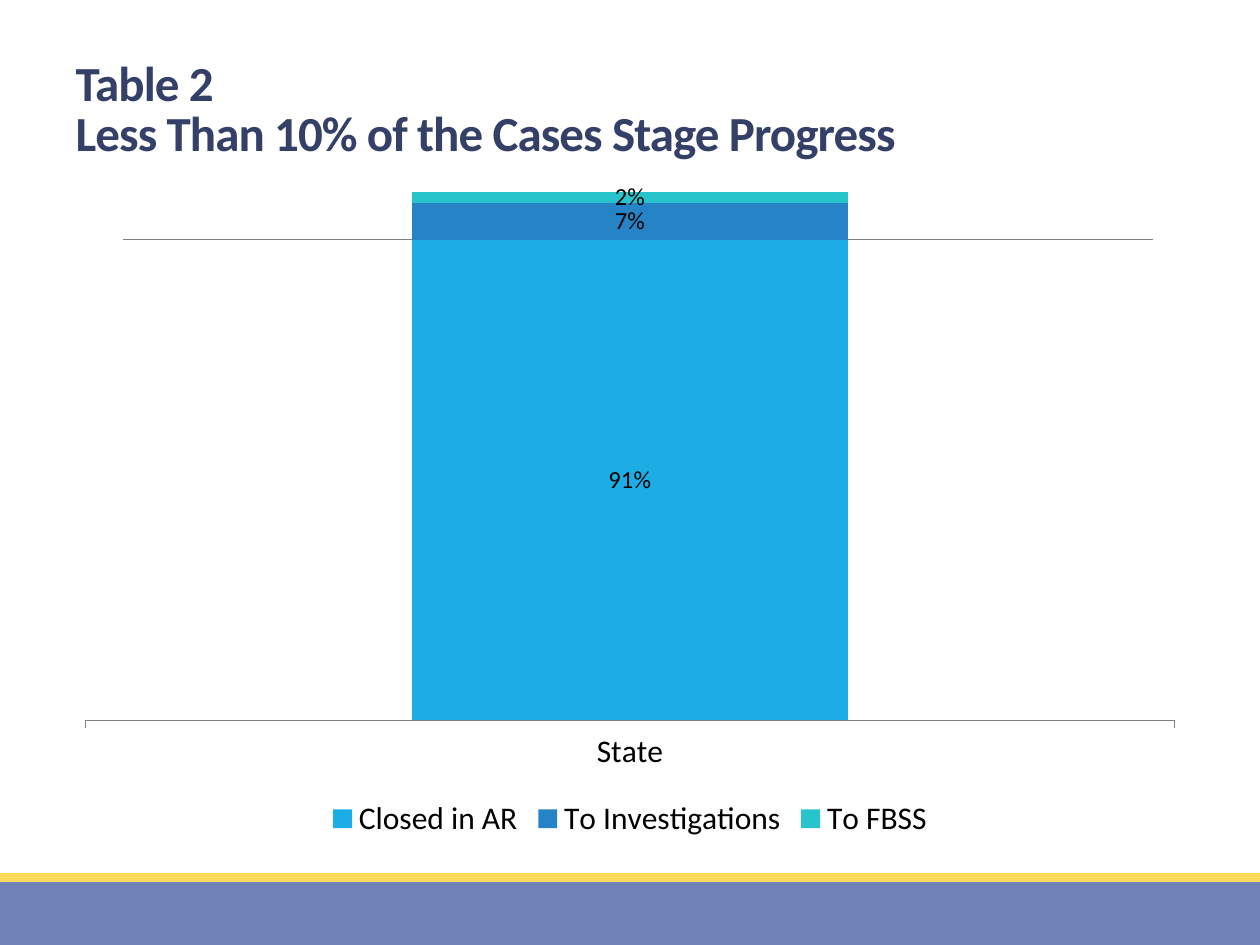
from dataclasses import dataclass

from lxml.etree import SubElement
from pptx import Presentation
from pptx.chart.data import CategoryChartData
from pptx.dml.color import RGBColor
from pptx.enum.chart import XL_CHART_TYPE as ChartType
from pptx.enum.chart import XL_LABEL_POSITION as LabelPos
from pptx.enum.chart import XL_LEGEND_POSITION as LegendPos
from pptx.enum.chart import XL_TICK_LABEL_POSITION as TickLabelPos
from pptx.enum.chart import XL_TICK_MARK as TickMark
from pptx.enum.shapes import MSO_CONNECTOR as Connector
from pptx.enum.shapes import MSO_SHAPE as Shape
from pptx.enum.text import MSO_ANCHOR as Anchor
from pptx.enum.text import MSO_AUTO_SIZE as AutoSize
from pptx.enum.text import PP_ALIGN as Align
from pptx.oxml.ns import qn
from pptx.util import Inches, Pt

FONT = "Calibri"
COLORS = {
    "title": "344068",
    "band": "7182B8",
    "stripe": "FFD85D",
    "rule": "808080",
    "text": "000000",
    "closed": "1CADE4",
    "investigations": "2683C6",
    "fbss": "28C4CC",
}


@dataclass
class Band:
    top: float
    height: float
    color: str


@dataclass
class Stage:
    name: str
    share: float
    color: str


BANDS = [Band(7, 0.5, "band"), Band(6.93, 0.07, "stripe")]
STAGES = [
    Stage("Closed in AR", 0.91, "closed"),
    Stage("To Investigations", 0.07, "investigations"),
    Stage("To FBSS", 0.02, "fbss"),
]


def rgb(name: str) -> RGBColor:
    """Return the named palette colour."""
    return RGBColor.from_string(COLORS[name])


def set_font(font, size: float, color: str = "text", bold: bool = False) -> None:
    """Apply the slide's typeface with a size, colour and weight."""
    font.name, font.size, font.bold = FONT, Pt(size), bold
    font.color.rgb = rgb(color)


def write_text(tf, text: str, *, size: float, color: str, bold: bool = False,
               line_spacing: float = 1.0, tracking: float = 0) -> None:
    """Write lines of one paragraph into a text frame and format them."""
    p = tf.paragraphs[0]
    p.alignment, p.line_spacing = Align.LEFT, line_spacing
    for i, line in enumerate(text.split("\n")):
        if i:
            p.add_line_break()
        r = p.add_run()
        r.text = line
        set_font(r.font, size, color, bold)
        r.font._element.set("spc", str(int(tracking * 100)))


def add_band(s, band: Band) -> None:
    """Draw a full-width band at the foot of the slide."""
    sp = s.shapes.add_shape(Shape.RECTANGLE, 0, Inches(band.top), Inches(10), Inches(band.height))
    sp.shadow.inherit = False
    sp.fill.solid()
    sp.fill.fore_color.rgb = rgb(band.color)
    sp.line.fill.background()


def add_rule(s) -> None:
    """Draw the thin horizontal rule behind the chart."""
    y = Inches(1.9)
    rule = s.shapes.add_connector(Connector.STRAIGHT, Inches(0.98), y, Inches(9.15), y)
    rule.line.color.rgb = rgb("rule")
    rule.line.width = Pt(0.5)
    SubElement(rule._element.spPr, qn("a:effectLst"))


def add_title(s) -> None:
    """Place and fill the title placeholder."""
    title = s.shapes.title
    title.left, title.top = Inches(0.5), Inches(0.08)
    title.width, title.height = Inches(9), Inches(1.25)
    tf = title.text_frame
    tf.word_wrap, tf.auto_size, tf.vertical_anchor = True, AutoSize.NONE, Anchor.BOTTOM
    write_text(tf, "Table 2\nLess Than 10% of the Cases Stage Progress", size=28,
               color="title", bold=True, line_spacing=0.85, tracking=-0.5)


def add_stage_chart(s) -> None:
    """Add the stacked column of case stages."""
    data = CategoryChartData(number_format="0%")
    data.categories = ["State"]
    for stage in STAGES:
        data.add_series(stage.name, [stage.share])
    chart = s.shapes.add_chart(ChartType.COLUMN_STACKED_100, Inches(0.5), Inches(1.42),
                               Inches(9), Inches(5.28), data).chart
    set_font(chart.font, 18)
    chart.has_title = False
    chart.has_legend = True
    chart.legend.position = LegendPos.BOTTOM
    chart.legend.include_in_layout = False

    values = chart.value_axis
    values.minimum_scale, values.maximum_scale = 0, 1
    values.has_major_gridlines = False
    values.visible = False
    cats = chart.category_axis
    cats.major_tick_mark = TickMark.OUTSIDE
    cats.tick_label_position = TickLabelPos.NEXT_TO_AXIS
    cats.format.line.color.rgb = rgb("rule")

    plot = chart.plots[0]
    plot.gap_width, plot.overlap, plot.vary_by_categories = 150, 100, False
    for series, stage in zip(plot.series, STAGES):
        series.format.fill.solid()
        series.format.fill.fore_color.rgb = rgb(stage.color)
        labels = series.data_labels
        labels.show_value = True
        labels.position = LabelPos.CENTER
        labels.number_format, labels.number_format_is_linked = "0%", False
        set_font(labels.font, 14)


def main() -> None:
    """Build and save the slide."""
    prs = Presentation()
    prs.slide_width, prs.slide_height = Inches(10), Inches(7.5)
    s = prs.slides.add_slide(prs.slide_layouts[5])
    for band in BANDS:
        add_band(s, band)
    add_rule(s)
    add_title(s)
    add_stage_chart(s)
    prs.save("out.pptx")


if __name__ == "__main__":
    main()
